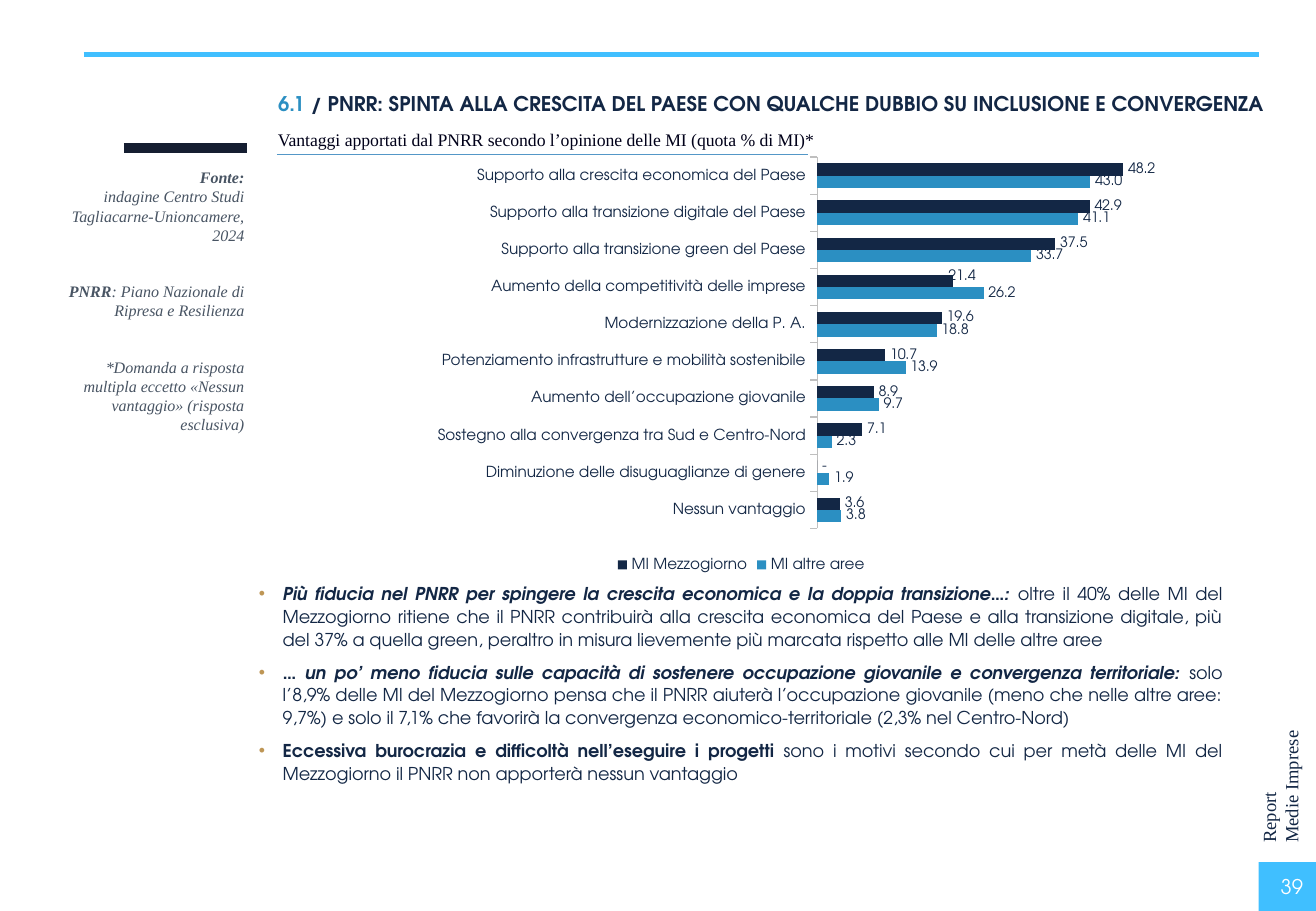
"""Build a report slide on the benefits expected from the PNRR."""
from dataclasses import dataclass

from lxml.etree import SubElement
from pptx import Presentation
from pptx.chart.data import CategoryChartData
from pptx.dml.color import RGBColor
from pptx.enum.chart import (XL_CHART_TYPE, XL_LABEL_POSITION,
                             XL_LEGEND_POSITION, XL_TICK_MARK)
from pptx.enum.shapes import MSO_CONNECTOR, MSO_SHAPE
from pptx.enum.text import MSO_ANCHOR, MSO_AUTO_SIZE, PP_ALIGN
from pptx.oxml.ns import qn
from pptx.util import Cm, Pt

BARS = XL_CHART_TYPE.BAR_CLUSTERED
OUTER = XL_LABEL_POSITION.OUTSIDE_END
BELOW = XL_LEGEND_POSITION.BOTTOM
TICK, BARE = XL_TICK_MARK.OUTSIDE, XL_TICK_MARK.NONE
LINE, RECT = MSO_CONNECTOR.STRAIGHT, MSO_SHAPE.RECTANGLE
TOP, MID = MSO_ANCHOR.TOP, MSO_ANCHOR.MIDDLE
FIXED = MSO_AUTO_SIZE.NONE
LEFT, RIGHT, JUST = PP_ALIGN.LEFT, PP_ALIGN.RIGHT, PP_ALIGN.JUSTIFY


@dataclass(frozen=True)
class Theme:
    """Colours, fonts and type sizes."""
    navy: str = "132745"
    blue: str = "2B8FC2"
    sky: str = "40BFFF"
    rule: str = "5397C7"
    dark: str = "151E31"
    ink: str = "000019"
    slate: str = "485463"
    gold: str = "BE9655"
    grey: str = "BFBFBF"
    white: str = "FFFFFF"
    sans: str = "TeX Gyre Adventor"
    serif: str = "Times New Roman"
    head: float = 12
    tab: float = 11
    body: float = 10.5
    base: float = 10
    note: float = 9.5
    axis: float = 9
    label: float = 8.5


def rgb(code):
    """Turn a hex code into a colour."""
    return RGBColor.from_string(code)


def place(node, mode, **spots):
    """Add a manual layout to a chart element."""
    lay = SubElement(node, qn("c:layout"))
    hand = SubElement(lay, qn("c:manualLayout"))
    if mode:
        SubElement(hand, qn("c:layoutTarget")).set("val", mode)
        for side in "xy":
            SubElement(hand, qn(f"c:{side}Mode")).set("val", "edge")
    for key, val in spots.items():
        SubElement(hand, qn(f"c:{key}")).set("val", str(val))
    return lay


class Page:
    """Draw styled elements on one slide."""

    def __init__(self, deck, theme):
        """Add a title-only slide."""
        self.look = theme
        self.slide = deck.slides.add_slide(deck.slide_layouts[5])
        self.shapes = self.slide.shapes

    def style(self, font, size, color, face=None):
        """Set size, colour and face of a font."""
        font.size, font.color.rgb = Pt(size), rgb(color)
        font.name = face or self.look.sans

    def fill(self, box, paras, size, color, face=None, align=LEFT,
             anchor=TOP):
        """Fill a frame; each run is text, marks and maybe a colour."""
        frame = box.text_frame
        frame.word_wrap, frame.auto_size = True, FIXED
        frame.vertical_anchor = anchor
        for num, runs in enumerate(paras):
            para = frame.add_paragraph() if num else frame.paragraphs[0]
            para.alignment = align
            for text, marks, *tint in runs:
                run = para.add_run()
                run.text = text
                self.style(run.font, size, tint[0] if tint else color, face)
                run.font.bold, run.font.italic = "b" in marks, "i" in marks
        return frame.paragraphs

    def title(self, spot, runs):
        """Move and fill the title placeholder."""
        box = self.shapes.title
        box.left, box.top, box.width, box.height = map(Cm, spot)
        self.fill(box, [runs], self.look.head, self.look.navy)

    def text(self, spot, paras, size, color, turn=0, **more):
        """Add a text box."""
        box = self.shapes.add_textbox(*map(Cm, spot))
        box.rotation = turn
        return self.fill(box, paras, size, color, **more)

    def points(self, spot, paras):
        """Add a justified bullet list."""
        look = self.look
        for para in self.text(spot, paras, look.body, look.navy, align=JUST):
            para.line_spacing, para.space_after = 1.07, Pt(6)
            props = para._p.get_or_add_pPr()
            props.set("marL", str(Cm(0.5)))
            props.set("indent", str(-Cm(0.5)))
            tint = SubElement(props, qn("a:buClr"))
            SubElement(tint, qn("a:srgbClr")).set("val", look.gold)
            SubElement(props, qn("a:buFont")).set("typeface", "Arial")
            SubElement(props, qn("a:buChar")).set("char", "•")

    def line(self, left, right, top, color, width):
        """Add a level line."""
        line = self.shapes.add_connector(
            LINE, Cm(left), Cm(top), Cm(right), Cm(top))
        line.line.color.rgb, line.line.width = rgb(color), Pt(width)
        SubElement(line._element.spPr, qn("a:effectLst"))

    def block(self, spot, color):
        """Add a plain filled block."""
        box = self.shapes.add_shape(RECT, *map(Cm, spot))
        box.shadow.inherit = False
        box.fill.solid()
        box.fill.fore_color.rgb = rgb(color)
        box.line.fill.background()

    def chart(self, spot, rows, names):
        """Add the clustered bars; rows run from bottom to top."""
        look = self.look
        data = CategoryChartData(number_format="0.0")
        data.categories = [row[0] for row in rows]
        for num, name in enumerate(names, 1):
            data.add_series(name, [row[num] for row in rows])
        chart = self.shapes.add_chart(BARS, *map(Cm, spot), data).chart
        chart.has_title = False
        self.style(chart.font, look.base, look.navy)
        chart.has_legend = True
        chart.legend.position = BELOW
        chart.legend.include_in_layout = False
        self.style(chart.legend.font, look.axis, look.navy)
        axis = chart.category_axis
        axis.major_tick_mark, axis.minor_tick_mark = TICK, BARE
        axis.format.line.color.rgb = rgb(look.grey)
        axis.format.line.width = Pt(0.75)
        self.style(axis.tick_labels.font, look.axis, look.navy)
        scale = chart.value_axis
        scale.minimum_scale, scale.maximum_scale = 0, 60
        scale.has_major_gridlines = scale.visible = False
        plot = chart.plots[0]
        plot.gap_width, plot.overlap = 102, 0
        plot.vary_by_categories = False
        for bars, color in zip(plot.series, (look.blue, look.navy)):
            bars.format.fill.solid()
            bars.format.fill.fore_color.rgb = rgb(color)
            tags = bars.data_labels
            tags.show_value, tags.position = True, OUTER
            tags.number_format, tags.number_format_is_linked = "0.0", False
            self.style(tags.font, look.label, look.navy)
        south = plot.series[1]
        dash = south.points[1].data_label
        dash.text_frame.text = "-"
        self.style(dash.text_frame.paragraphs[0].runs[0].font,
                   look.label, look.navy)
        dash.position = OUTER
        moved = south.points[6].data_label
        self.style(moved.font, look.label, look.navy)
        moved.position = OUTER
        node = south.data_labels._element.findall(qn("c:dLbl"))[1]
        node.insert(1, place(node, "", x=-0.01, y=-0.01))
        area = chart._chartSpace.chart.plotArea
        area.insert(0, place(area, "inner", x=0.58, y=0.04, w=0.4, h=0.85))


ROWS = [
    ("Nessun vantaggio", 3.8, 3.6),
    ("Diminuzione delle disuguaglianze di genere", 1.9, 0),
    ("Sostegno alla convergenza tra Sud e Centro-Nord", 2.3, 7.1),
    ("Aumento dell’occupazione giovanile", 9.7, 8.9),
    ("Potenziamento infrastrutture e mobilità sostenibile", 13.9, 10.7),
    ("Modernizzazione della P. A.", 18.8, 19.6),
    ("Aumento della competitività delle imprese", 26.2, 21.4),
    ("Supporto alla transizione green del Paese", 33.7, 37.5),
    ("Supporto alla transizione digitale del Paese", 41.1, 42.9),
    ("Supporto alla crescita economica del Paese", 43, 48.2),
]
POINTS = [
    [("Più fiducia nel PNRR per spingere la crescita economica e la doppia transizione…: ", "bi"),
     ("oltre il 40% delle MI del Mezzogiorno ritiene che il PNRR contribuirà alla crescita economica del Paese e alla transizione digitale, più del 37% a quella green, peraltro in misura lievemente più marcata rispetto alle MI delle altre aree", "")],
    [("… un po’ meno fiducia sulle capacità di sostenere occupazione giovanile e convergenza territoriale: ", "bi"),
     ("solo l’8,9% delle MI del Mezzogiorno pensa che il PNRR aiuterà l’occupazione giovanile (meno che nelle altre aree: 9,7%) e solo il 7,1% che favorirà la convergenza economico-territoriale (2,3% nel Centro-Nord)", "")],
    [("Eccessiva burocrazia e difficoltà nell’eseguire i progetti ", "b"),
     ("sono i motivi secondo cui per metà delle MI del Mezzogiorno il PNRR non apporterà nessun vantaggio", "")],
]
NOTES = [
    [("Fonte:", "bi")],
    [("indagine Centro Studi Tagliacarne-Unioncamere, 2024", "i")],
    [("PNRR", "bi"), (": Piano Nazionale di Ripresa e Resilienza", "i")],
    [("*Domanda a risposta multipla eccetto «Nessun vantaggio» (risposta esclusiva)", "i")],
]
HEAD = " / PNRR: SPINTA ALLA CRESCITA DEL PAESE CON QUALCHE DUBBIO SU INCLUSIONE E CONVERGENZA"
LEAD = "Vantaggi apportati dal PNRR secondo l’opinione delle MI (quota % di MI)*"


def main():
    """Build and save the slide."""
    deck = Presentation()
    deck.slide_width, deck.slide_height = Cm(27.51), Cm(19.05)
    look = Theme()
    page = Page(deck, look)
    page.block((26.31, 18.03, 1.2, 1.02), look.sky)
    page.text((24.36, 14.88, 4.8, 1.19),
              [[("Report", "")], [("Medie Imprese", "")]],
              look.tab, look.navy, turn=270, face=look.serif)
    page.line(1.75, 26.31, 1.14, look.sky, 2.5)
    page.points((5.16, 12.04, 20.65, 4.5), POINTS)
    page.title((5.56, 1.78, 21.92, 0.76),
               [("6.1", "b", look.blue), (HEAD, "b")])
    page.text((21.29, 18.03, 6.2, 1.02), [[("39", "")]],
              look.head, look.white, align=RIGHT, anchor=MID)
    page.text((5.56, 2.57, 19.91, 0.71), [[(LEAD, "")]],
              look.body, look.ink, face=look.serif)
    page.line(5.79, 16.89, 3.23, look.rule, 0.75)
    notes = page.text((1.19, 3.38, 4.17, 6.4), NOTES, look.note, look.slate,
                      face=look.serif, align=RIGHT)
    for para in notes[2:]:
        para.space_before = Pt(22)
    page.line(2.59, 5.16, 3.1, look.dark, 6)
    page.chart((5.54, 2.92, 19.91, 9.14), ROWS,
               ("MI altre aree", "MI Mezzogiorno"))
    deck.save("out.pptx")


if __name__ == "__main__":
    main()
